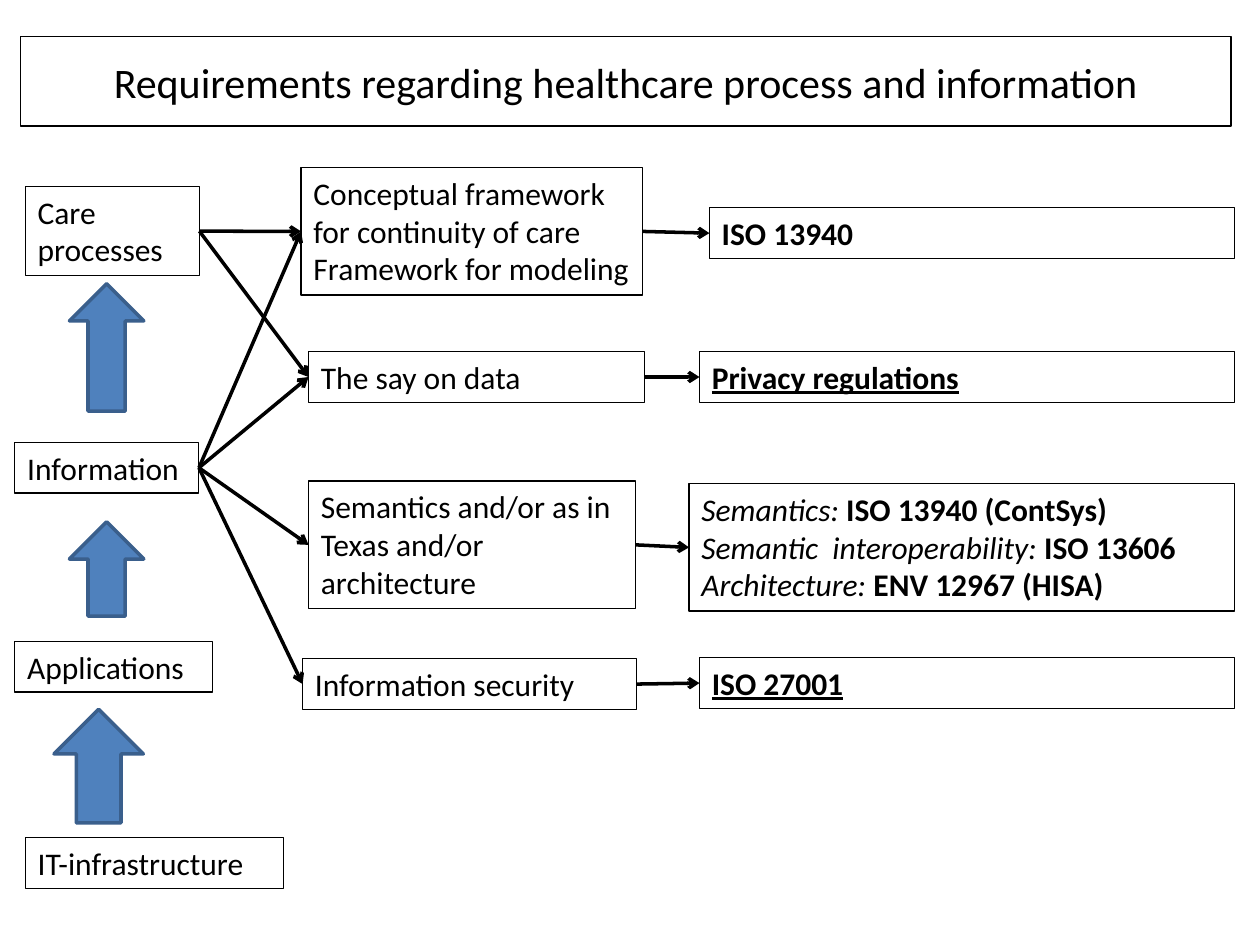
"""Builds a slide on requirements for healthcare process and information."""
from lxml import etree
from pptx import Presentation
from pptx.dml.color import RGBColor
from pptx.enum.shapes import MSO_CONNECTOR, MSO_SHAPE
from pptx.enum.text import MSO_ANCHOR, MSO_AUTO_SIZE, PP_ALIGN
from pptx.oxml.ns import qn
from pptx.util import Cm, Pt

STRAIGHT = MSO_CONNECTOR.STRAIGHT
UP_ARROW = MSO_SHAPE.UP_ARROW
FIT_TEXT = MSO_AUTO_SIZE.SHAPE_TO_FIT_TEXT
NO_FIT = MSO_AUTO_SIZE.NONE
TOP, MIDDLE = MSO_ANCHOR.TOP, MSO_ANCHOR.MIDDLE
LEFT, CENTER = PP_ALIGN.LEFT, PP_ALIGN.CENTER

BLACK = RGBColor(0x00, 0x00, 0x00)
BLUE = RGBColor(0x4F, 0x81, 0xBD)
DARK_BLUE = RGBColor(0x3A, 0x5F, 0x8C)

PLAIN = {}
BOLD = {"bold": True}
ITALIC = {"italic": True}
BOLD_UNDERLINED = {"bold": True, "underline": True}

LEFT_SIDE, RIGHT_SIDE = 1, 3
RIGHT_EDGE = 24.89
ONE_LINE, TWO_LINES, THREE_LINES = 1.02, 1.8, 2.57

TITLE = [[("Requirements regarding healthcare process and information", PLAIN)]]

LAYERS = {
    "care": (0.51, 3.76, 3.51, TWO_LINES, "Care processes"),
    "information": (0.3, 8.92, 3.71, ONE_LINE, "Information"),
    "applications": (0.3, 12.93, 3.99, ONE_LINE, "Applications"),
    "infrastructure": (0.51, 16.89, 5.21, ONE_LINE, "IT-infrastructure"),
}
LAYER_ARROWS = [(1.4, 5.72, 1.5, 2.57), (1.4, 10.52, 1.5, 1.9), (1.09, 14.3, 1.8, 2.29)]

TOPICS = {
    "concepts": (6.07, 3.38, 6.88, THREE_LINES,
                 "Conceptual framework for continuity of care\nFramework for modeling"),
    "say": (6.22, 7.09, 6.78, ONE_LINE, "The say on data"),
    "semantics": (6.22, 9.7, 6.6, THREE_LINES,
                  "Semantics and/or as in Texas and/or architecture"),
    "security": (6.1, 13.28, 6.73, ONE_LINE, "Information security"),
}
STANDARDS = {
    "concepts": (14.3, 4.19, ONE_LINE, [[("ISO 13940", BOLD)]]),
    "say": (14.1, 7.09, ONE_LINE, [[("Privacy regulations", BOLD_UNDERLINED)]]),
    "semantics": (13.89, 9.75, THREE_LINES, [
        [("Semantics: ", ITALIC), ("ISO 13940 (ContSys)", BOLD)],
        [("Semantic  interoperability: ", ITALIC), ("ISO 13606", BOLD)],
        [("Architecture: ", ITALIC), ("ENV 12967 (HISA)", BOLD)],
    ]),
    "security": (14.1, 13.26, ONE_LINE, [[("ISO 27001", BOLD_UNDERLINED)]]),
}
LAYER_TOPICS = {
    "care": ["concepts", "say"],
    "information": ["concepts", "say", "semantics", "security"],
}


def set_all(target, values):
    """Set each attribute in a dict of format values."""
    for name, value in values.items():
        setattr(target, name, value)


def set_line(line, color, width):
    """Give a line its colour and width."""
    line.color.rgb = color
    line.width = Pt(width)


def plain_paragraphs(text):
    """Turn lines of text into paragraphs of one plain run."""
    return [[(line, PLAIN)] for line in text.split("\n")]


def add_box(slide, left, top, width, height, paragraphs,
            size=18, align=LEFT, anchor=TOP, fit=FIT_TEXT):
    """Add an outlined text box with formatted runs."""
    box = slide.shapes.add_textbox(Cm(left), Cm(top), Cm(width), Cm(height))
    set_line(box.line, BLACK, 0.75)
    frame = box.text_frame
    set_all(frame, {"word_wrap": True, "auto_size": fit, "vertical_anchor": anchor})
    for index, runs in enumerate(paragraphs):
        paragraph = frame.add_paragraph() if index else frame.paragraphs[0]
        paragraph.alignment = align
        for text, style in runs:
            run = paragraph.add_run()
            run.text = text
            run.font.color.rgb = BLACK
            set_all(run.font, {"name": "Calibri", "size": Pt(size), **style})
    return box


def add_layer_arrow(slide, left, top, width, height):
    """Add a blue block arrow that points to the layer above."""
    arrow = slide.shapes.add_shape(UP_ARROW, Cm(left), Cm(top), Cm(width), Cm(height))
    arrow.shadow.inherit = False
    arrow.fill.solid()
    arrow.fill.fore_color.rgb = BLUE
    set_line(arrow.line, DARK_BLUE, 2)


def join(slide, source, target):
    """Draw an arrow from the right side of one box to the left side of another."""
    link = slide.shapes.add_connector(STRAIGHT, 0, 0, 0, 0)
    link.begin_connect(source, RIGHT_SIDE)
    link.end_connect(target, LEFT_SIDE)
    set_line(link.line, BLACK, 2)
    etree.SubElement(link.line._get_or_add_ln(), qn("a:tailEnd"), type="arrow")
    etree.SubElement(link._element.spPr, qn("a:effectLst"))


def main():
    """Build and save the slide."""
    deck = Presentation()
    set_all(deck, {"slide_width": Cm(25.4), "slide_height": Cm(19.05)})
    slide = deck.slides.add_slide(deck.slide_layouts[6])

    add_box(slide, 0.41, 0.74, 24.41, TWO_LINES, TITLE,
            size=24, align=CENTER, anchor=MIDDLE, fit=NO_FIT)
    layers, topics = (
        {key: add_box(slide, *place, plain_paragraphs(text))
         for key, (*place, text) in column.items()}
        for column in (LAYERS, TOPICS)
    )
    for key, (left, top, height, paragraphs) in STANDARDS.items():
        standard = add_box(slide, left, top, RIGHT_EDGE - left, height, paragraphs)
        join(slide, topics[key], standard)
    for layer, keys in LAYER_TOPICS.items():
        for key in keys:
            join(slide, layers[layer], topics[key])
    for place in LAYER_ARROWS:
        add_layer_arrow(slide, *place)

    deck.save("out.pptx")


if __name__ == "__main__":
    main()
